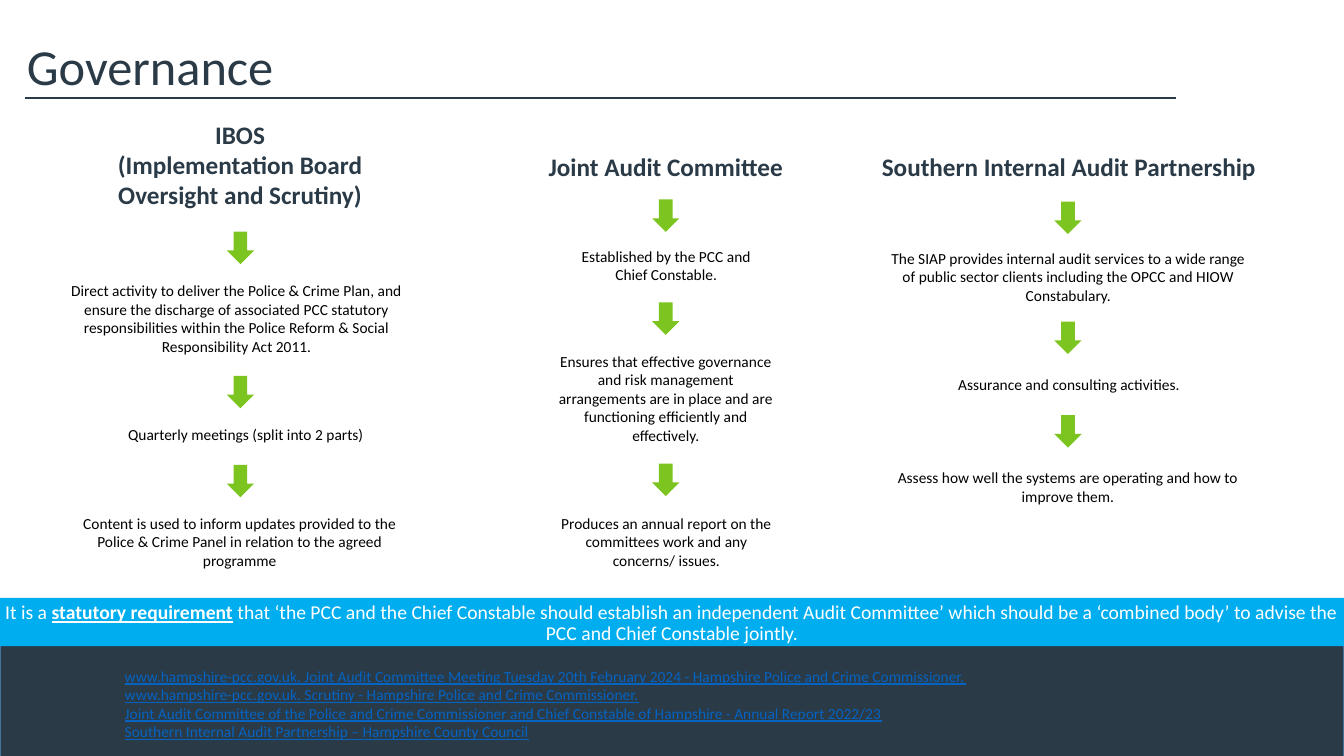
from dataclasses import dataclass

from lxml.etree import SubElement
from pptx import Presentation
from pptx.dml.color import RGBColor
from pptx.enum.shapes import MSO_CONNECTOR, MSO_SHAPE
from pptx.enum.text import MSO_ANCHOR as Anchor, PP_ALIGN as Align
from pptx.oxml.ns import qn
from pptx.util import Pt


@dataclass(frozen=True)
class Theme:
    font: str = "Calibri"
    navy: str = "2A3A47"
    blue: str = "00AEEF"
    green: str = "7CC420"
    edge: str = "43739E"
    link: str = "0563C1"
    white: str = "FFFFFF"
    black: str = "000000"
    title: int = 36
    heading: int = 18
    banner: int = 14
    body: int = 11


THEME = Theme()
SLIDE_WIDTH, SLIDE_HEIGHT = 960, 540
ARROW_WIDTH, ARROW_HEIGHT = 19.5, 23.2

# Each column: arrow left edge, heading and its box, then steps of
# (arrow top, text box, text). Boxes are left, top, width, height.
COLUMNS = [
    (162, ["IBOS", "(Implementation Board", "Oversight and Scrutiny)"], (67.5, 81.5, 208, 72.7), [
        (165.5, (30, 197.3, 278, 60.5),
         "Direct activity to deliver the Police & Crime Plan, and ensure the discharge of "
         "associated PCC statutory responsibilities within the Police Reform & Social "
         "Responsibility Act 2011."),
        (268.5, (51.8, 300.2, 247.7, 20.9), "Quarterly meetings (split into 2 parts)"),
        (332, (43, 363.6, 256.5, 47.5),
         "Content is used to inform updates provided to the Police & Crime Panel in relation "
         "to the agreed programme"),
    ]),
    (465.8, ["Joint Audit Committee"], (375.8, 104.4, 199.5, 28.8), [
        (142.5, (399.6, 172.8, 152.6, 33.8), "Established by the PCC and Chief Constable."),
        (216, (388.8, 247.9, 173.5, 74.2),
         "Ensures that effective governance and risk management arrangements are in place and "
         "are functioning efficiently and effectively."),
        (331.2, (391, 363.6, 170, 47.5),
         "Produces an annual report on the committees work and any concerns/ issues."),
    ]),
    (753.1, ["Southern Internal Audit Partnership"], (609.8, 104.4, 307.5, 28.8), [
        (144, (627.8, 174.2, 270.7, 60.5),
         "The SIAP provides internal audit services to a wide range of public sector clients "
         "including the OPCC and HIOW Constabulary."),
        (229.7, (668.2, 264.2, 190.8, 20.9), "Assurance and consulting activities."),
        (296.6, (633.6, 331.2, 258.5, 33.8),
         "Assess how well the systems are operating and how to improve them."),
    ]),
]

BANNER = [
    ("It is a ", False),
    ("statutory requirement", True),
    (" that ‘the PCC and the Chief Constable should establish an independent Audit Committee’ "
     "which should be a ‘combined body’ to advise the PCC and Chief Constable jointly.", False),
]

SOURCES = [
    "www.hampshire-pcc.gov.uk. Joint Audit Committee Meeting Tuesday 20th February 2024 - "
    "Hampshire Police and Crime Commissioner.",
    "www.hampshire-pcc.gov.uk. Scrutiny - Hampshire Police and Crime Commissioner.",
    "Joint Audit Committee of the Police and Crime Commissioner and Chief Constable of "
    "Hampshire - Annual Report 2022/23",
    "Southern Internal Audit Partnership – Hampshire County Council",
]


def add_span(para, text, *, size, color, bold=False, underline=False):
    span = para.add_run()
    span.text = text
    span.font.name = THEME.font
    span.font.size = Pt(size)
    span.font.color.rgb = RGBColor.from_string(color)
    span.font.bold = bold
    span.font.underline = underline


def add_text(page, lines, bounds, *, align=Align.CENTER, anchor=Anchor.TOP, wrap=True, **style):
    box = page.shapes.add_textbox(*map(Pt, bounds))
    frame = box.text_frame
    frame.word_wrap = wrap
    frame.vertical_anchor = anchor
    for index, line in enumerate(lines):
        para = frame.add_paragraph() if index else frame.paragraphs[0]
        para.alignment = align
        add_span(para, line, **style)


def add_block(page, kind, bounds, fill, edge=None):
    block = page.shapes.add_shape(kind, *map(Pt, bounds))
    block.shadow.inherit = False
    block.fill.solid()
    block.fill.fore_color.rgb = RGBColor.from_string(fill)
    if edge:
        block.line.color.rgb = RGBColor.from_string(edge)
        block.line.width = Pt(1)
    else:
        block.line.fill.background()
    return block


def add_rule(page, left, right, top):
    rule = page.shapes.add_connector(MSO_CONNECTOR.STRAIGHT, Pt(left), Pt(top), Pt(right), Pt(top))
    rule.line.color.rgb = RGBColor.from_string(THEME.navy)
    rule.line.width = Pt(1.5)
    SubElement(rule._element.spPr, qn("a:effectLst"))


def add_banner(page, bounds):
    frame = add_block(page, MSO_SHAPE.RECTANGLE, bounds, THEME.blue).text_frame
    frame.word_wrap = True
    frame.vertical_anchor = Anchor.TOP
    para = frame.paragraphs[0]
    para.alignment = Align.CENTER
    para.line_spacing = 0.9
    for text, strong in BANNER:
        add_span(para, text, size=THEME.banner, color=THEME.white, bold=strong, underline=strong)


def add_column(page, arrow_left, heading, heading_bounds, steps):
    add_text(page, heading, heading_bounds, wrap=False,
             size=THEME.heading, color=THEME.navy, bold=True)
    for arrow_top, bounds, text in steps:
        add_block(page, MSO_SHAPE.DOWN_ARROW,
                  (arrow_left, arrow_top, ARROW_WIDTH, ARROW_HEIGHT), THEME.green)
        add_text(page, [text], bounds, size=THEME.body, color=THEME.black)


def main():
    deck = Presentation()
    deck.slide_width, deck.slide_height = Pt(SLIDE_WIDTH), Pt(SLIDE_HEIGHT)
    page = deck.slides.add_slide(deck.slide_layouts[6])

    # Footer and title
    add_block(page, MSO_SHAPE.RECTANGLE, (0, 457.2, SLIDE_WIDTH, 90), THEME.navy, THEME.edge)
    add_text(page, ["Governance"], (12.2, 0, 823.7, 93.6), align=Align.LEFT,
             anchor=Anchor.MIDDLE, size=THEME.title, color=THEME.navy)
    add_rule(page, 18, 840, 70)

    # Three governance bodies
    for column in COLUMNS:
        add_column(page, *column)

    # Statutory banner and sources
    add_banner(page, (-5, 427, 970, 34.5))
    add_text(page, SOURCES, (82, 473, 618.5, 60.5), align=Align.LEFT, wrap=False,
             size=THEME.body, color=THEME.link, underline=True)

    deck.save("out.pptx")


if __name__ == "__main__":
    main()
